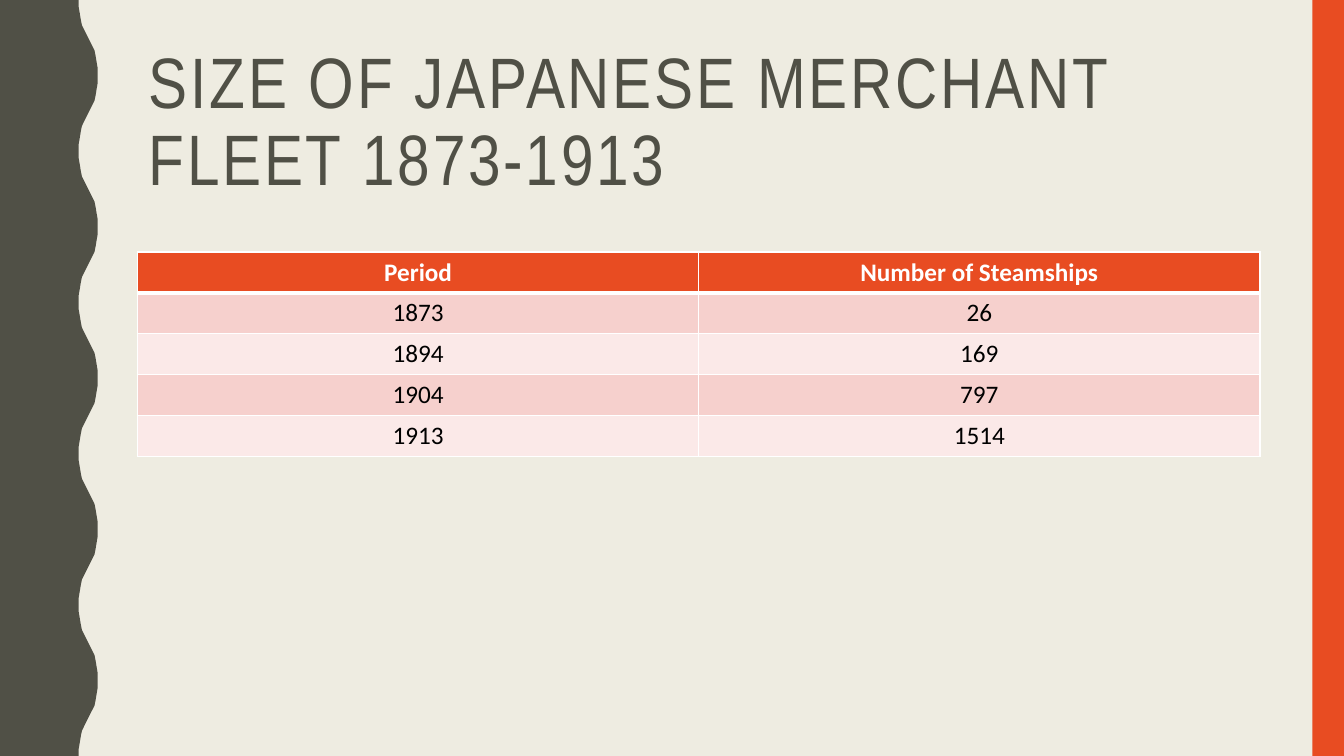
from lxml.etree import SubElement
from pptx import Presentation
from pptx.dml.color import RGBColor
from pptx.enum.shapes import MSO_SHAPE
from pptx.enum.text import MSO_ANCHOR, MSO_AUTO_SIZE, PP_ALIGN
from pptx.oxml import parse_xml
from pptx.oxml.ns import nsdecls, qn
from pptx.util import Pt

PX = 9525
PAGE_WIDTH, PAGE_HEIGHT = 1280, 720
COLORS = {
    "page": "EEECE1",
    "dark": "505046",
    "accent": "E84C22",
    "band": "F6D0CD",
    "light band": "FBE9E8",
    "white": "FFFFFF",
    "black": "000000",
}
TITLE = "SIZE OF JAPANESE MERCHANT FLEET 1873-1913"
FLEET = [
    ("Period", "Number of Steamships"),
    ("1873", "26"),
    ("1894", "169"),
    ("1904", "797"),
    ("1913", "1514"),
]
TITLE_FONT = {"name": "Arial Narrow", "size": Pt(51), "bold": False}
HEADER_FONT = {"name": "Calibri", "size": Pt(18), "bold": True}
BODY_FONT = {**HEADER_FONT, "bold": False}


def color(name):
    return RGBColor.from_string(COLORS[name])


def scaled(box):
    return [length * PX for length in box]


def apply_format(target, values):
    for name, value in values.items():
        setattr(target, name, value)


def fill_solid(target, name):
    target.fill.solid()
    target.fill.fore_color.rgb = color(name)


def style_shape(shape, name):
    fill_solid(shape, name)
    shape.line.fill.background()
    shape.shadow.inherit = False


def wave_points(width, trough, period):
    """One period of the wavy edge, built from its first quarter."""
    quarter = [(0, 0), (0, 7), (1, 13), (2, 19), (3, 24), (5, 28), (7, 32), (9, 36)]
    depth, half_period = width - trough, period // 2
    rise = quarter + [(depth - x, half_period - y) for x, y in quarter[-2::-1]]
    fall = [(x, period - y) for x, y in rise[-2::-1]]
    return [(trough + x, y) for x, y in rise + fall]


def add_wavy_band(page, box):
    left, top, width, height = box
    trough, period = 75, 144
    wave = wave_points(width, trough, period)
    edge = [(left + x, top + start + y)
            for start in range(0, height, period) for x, y in wave]
    builder = page.shapes.build_freeform(left, top, scale=PX)
    builder.add_line_segments(edge + [(left, top + height)], close=True)
    style_shape(builder.convert_to_shape(), "dark")


def add_side_bar(page, box):
    bar = page.shapes.add_shape(MSO_SHAPE.RECTANGLE, *scaled(box))
    style_shape(bar, "accent")


def place_title(page, box):
    title = page.shapes.title
    apply_format(title, dict(zip(("left", "top", "width", "height"), scaled(box))))
    frame = title.text_frame
    apply_format(frame, {
        "word_wrap": True,
        "auto_size": MSO_AUTO_SIZE.NONE,
        "vertical_anchor": MSO_ANCHOR.MIDDLE,
    })
    para = frame.paragraphs[0]
    apply_format(para, {"alignment": PP_ALIGN.LEFT, "line_spacing": 0.9})
    span = para.add_run()
    span.text = TITLE
    apply_format(span.font, TITLE_FONT)
    span.font.color.rgb = color("dark")
    span.font._element.set("spc", "200")


def set_borders(cell, widths):
    """Draw white borders, with widths in points for left, right, top and bottom."""
    properties = cell._tc.get_or_add_tcPr()
    for index, (side, width) in enumerate(zip("LRTB", widths)):
        line = parse_xml(f'<a:ln{side} {nsdecls("a")} w="{Pt(width)}"/>')
        fill = SubElement(line, qn("a:solidFill"))
        SubElement(fill, qn("a:srgbClr"), val=COLORS["white"])
        properties.insert(index, line)


def fill_cell(cell, text, row):
    header = row == 0
    fill_solid(cell, "accent" if header else "band" if row % 2 else "light band")
    set_borders(cell, (1, 1, 3 if row == 1 else 1, 3 if header else 1))
    para = cell.text_frame.paragraphs[0]
    para.alignment = PP_ALIGN.CENTER
    span = para.add_run()
    span.text = text
    apply_format(span.font, HEADER_FONT if header else BODY_FONT)
    span.font.color.rgb = color("white" if header else "black")


def add_fleet_table(page, box):
    frame = page.shapes.add_table(len(FLEET), len(FLEET[0]), *scaled(box))
    for row, values in enumerate(FLEET):
        for column, text in enumerate(values):
            fill_cell(frame.table.cell(row, column), text, row)


def main():
    deck = Presentation()
    deck.slide_width, deck.slide_height = scaled((PAGE_WIDTH, PAGE_HEIGHT))
    page = deck.slides.add_slide(deck.slide_layouts.get_by_name("Title Only"))
    fill_solid(page.background, "page")
    add_wavy_band(page, (0, 0, 93, PAGE_HEIGHT))
    add_side_bar(page, (PAGE_WIDTH - 30, 0, 30, PAGE_HEIGHT))
    place_title(page, (132, 40, 1068, 156))
    add_fleet_table(page, (131, 240, 1069, 195))
    deck.save("out.pptx")


if __name__ == "__main__":
    main()
